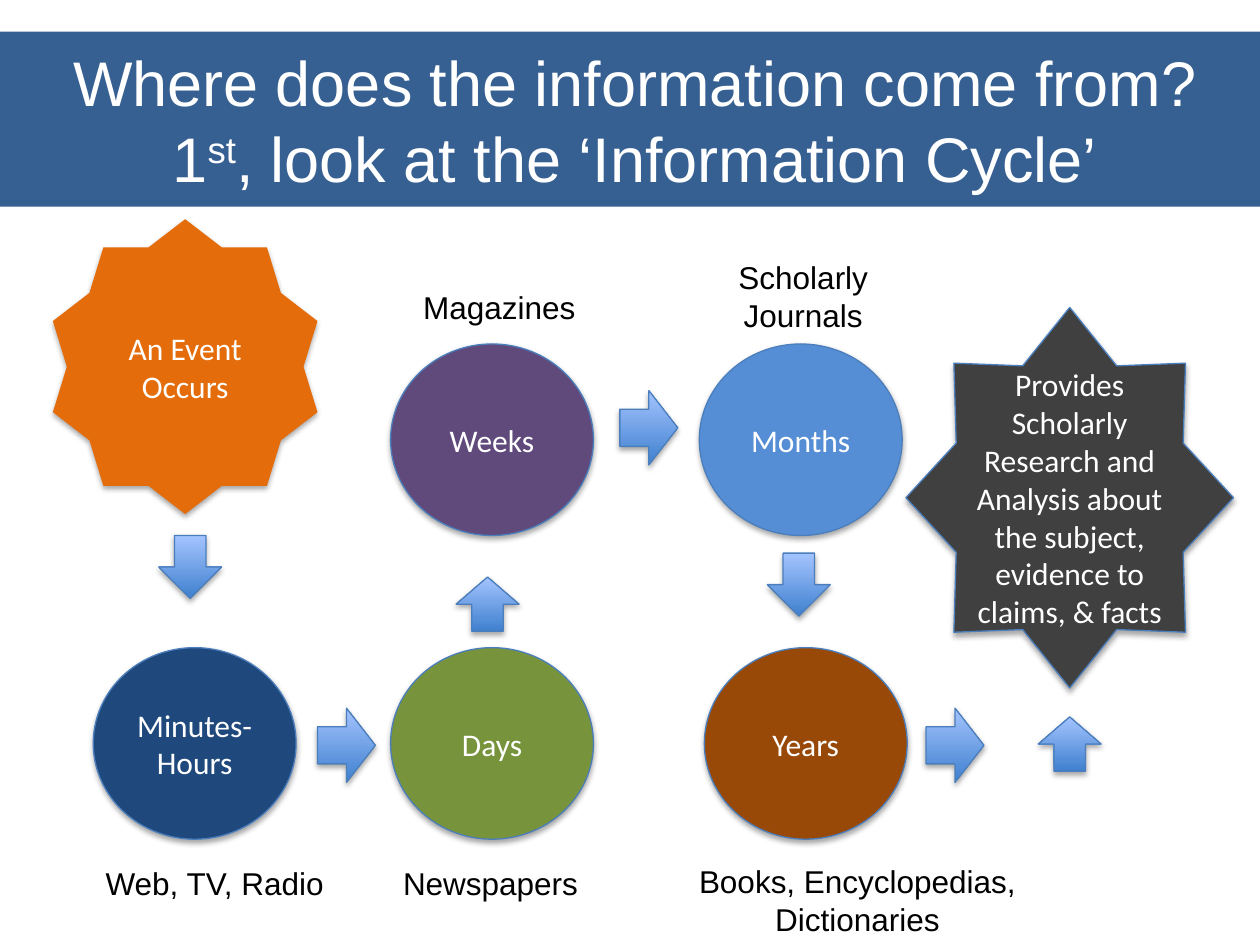
"""Build the "Information Cycle" slide."""
from dataclasses import dataclass

from lxml.etree import SubElement
from pptx import Presentation
from pptx.dml.color import RGBColor as RGB
from pptx.enum.shapes import MSO_SHAPE as Shape
from pptx.enum.text import MSO_ANCHOR as Anchor
from pptx.enum.text import MSO_AUTO_SIZE as AutoSize
from pptx.enum.text import PP_ALIGN as Align
from pptx.oxml.ns import qn
from pptx.util import Pt


@dataclass(frozen=True)
class Theme:
    """Colours, fonts and type sizes of the slide."""
    banner: str = "376092"
    event: str = "E46C0A"
    minutes: str = "1F497D"
    days: str = "77933C"
    weeks: str = "604A7B"
    months: str = "558ED5"
    years: str = "984807"
    result: str = "404040"
    outline: str = "4B7EBC"
    arrow_low: str = "3F80CE"
    arrow_high: str = "A4C4FF"
    light: str = "FFFFFF"
    dark: str = "000000"
    label_font: str = "Arial"
    shape_font: str = "Calibri"
    title_size: float = 36
    body_size: float = 18


@dataclass(frozen=True)
class Box:
    """A place and size in points."""
    left: float
    top: float
    width: float
    height: float

    def lengths(self) -> tuple:
        """Return the four lengths for python-pptx."""
        return Pt(self.left), Pt(self.top), Pt(self.width), Pt(self.height)


@dataclass(frozen=True)
class Stage:
    """A filled shape with a caption inside."""
    text: str
    kind: Shape
    box: Box
    color: str
    outlined: bool = True


@dataclass(frozen=True)
class Arrow:
    """A block arrow at a place."""
    kind: Shape
    left: float
    top: float


@dataclass(frozen=True)
class Label:
    """A text label naming the sources of a stage."""
    text: str
    box: Box
    align: Align = Align.LEFT


THEME = Theme()
UPPER, LOWER = 196.56, 370.08
LEFT, MIDDLE = 53.28, 223.2
ARROW_SIZES = {
    Shape.RIGHT_ARROW: (33.12, 42.48),
    Shape.DOWN_ARROW: (36, 36),
    Shape.UP_ARROW: (36, 31),
}


def circle(text: str, left: float, top: float, color: str) -> Stage:
    """Describe a round stage of the common size."""
    return Stage(text, Shape.OVAL, Box(left, top, 115.92, 109.44), color)


STAGES = [
    Stage("An Event Occurs", Shape.STAR_10_POINT,
          Box(30.24, 125.28, 151.2, 168.48), THEME.event, False),
    circle("Minutes-Hours", LEFT, LOWER, THEME.minutes),
    circle("Days", MIDDLE, LOWER, THEME.days),
    circle("Weeks", MIDDLE, UPPER, THEME.weeks),
    circle("Months", 399.6, UPPER, THEME.months),
    circle("Years", 402.48, LOWER, THEME.years),
    Stage("Provides Scholarly Research and Analysis about the subject, "
          "evidence to claims, & facts", Shape.STAR_8_POINT,
          Box(517.68, 175.68, 187.2, 217.44), THEME.result),
]
ARROWS = [
    Arrow(Shape.DOWN_ARROW, 90.72, 306),
    Arrow(Shape.RIGHT_ARROW, 181.44, 404.64),
    Arrow(Shape.UP_ARROW, 260.64, 329.76),
    Arrow(Shape.RIGHT_ARROW, 354.24, 223.2),
    Arrow(Shape.DOWN_ARROW, 438.48, 316.08),
    Arrow(Shape.RIGHT_ARROW, 529.2, 404.64),
    Arrow(Shape.UP_ARROW, 593.28, 409.68),
]
LABELS = [
    Label("Web, TV, Radio", Box(LEFT, 490.32, 161.28, 29)),
    Label("Newspapers", Box(MIDDLE, 490.32, 138.24, 29)),
    Label("Magazines", Box(234.72, 161.28, 138.24, 29)),
    Label("Scholarly Journals", Box(402.48, 144, 113.04, 51), Align.CENTER),
    Label("Books, Encyclopedias, Dictionaries",
          Box(389.52, 488.88, 200.88, 51), Align.CENTER),
]


def add_run(p, text: str, font: str, size: float, color: str):
    """Add a formatted run to a paragraph and return it."""
    r = p.add_run()
    r.text = text
    r.font.name, r.font.size = font, Pt(size)
    r.font.color.rgb = RGB.from_string(color)
    return r


def add_shadow(s) -> None:
    """Give a shape the soft shadow that falls straight down."""
    s.shadow.inherit = False
    effects = s._element.spPr.find(qn("a:effectLst"))
    outer = SubElement(effects, qn("a:outerShdw"), blurRad="40000",
                       dist="23000", dir="5400000", rotWithShape="0")
    color = SubElement(outer, qn("a:srgbClr"), val=THEME.dark)
    SubElement(color, qn("a:alpha"), val="35000")


def add_outline(s) -> None:
    """Draw the thin blue outline."""
    s.line.color.rgb = RGB.from_string(THEME.outline)
    s.line.width = Pt(0.75)


def add_title(slide) -> None:
    """Turn the title placeholder into the banner."""
    s = slide.shapes.title
    s.left, s.top, s.width, s.height = Box(0, 18, 725.76, 100.08).lengths()
    s.fill.solid()
    s.fill.fore_color.rgb = RGB.from_string(THEME.banner)
    tf = s.text_frame
    tf.vertical_anchor = Anchor.MIDDLE
    p = tf.paragraphs[0]
    p.alignment = Align.CENTER
    style = THEME.label_font, THEME.title_size, THEME.light
    add_run(p, "Where does the information come from?", *style)
    p.add_line_break()
    add_run(p, "1", *style)
    r = add_run(p, "st", *style)
    r._r.get_or_add_rPr().set("baseline", "30000")
    add_run(p, ", look at the ‘Information Cycle’", *style)


def add_stage(slide, stage: Stage) -> None:
    """Draw a stage with its centred caption."""
    s = slide.shapes.add_shape(stage.kind, *stage.box.lengths())
    s.fill.solid()
    s.fill.fore_color.rgb = RGB.from_string(stage.color)
    if stage.outlined:
        add_outline(s)
    else:
        s.line.fill.background()
    add_shadow(s)
    tf = s.text_frame
    tf.word_wrap, tf.vertical_anchor = True, Anchor.MIDDLE
    p = tf.paragraphs[0]
    p.alignment = Align.CENTER
    add_run(p, stage.text, THEME.shape_font, THEME.body_size, THEME.light)


def add_arrow(slide, arrow: Arrow) -> None:
    """Draw a block arrow with the vertical gradient."""
    box = Box(arrow.left, arrow.top, *ARROW_SIZES[arrow.kind])
    s = slide.shapes.add_shape(arrow.kind, *box.lengths())
    s.fill.gradient()
    s.fill.gradient_angle = 90
    for stop, color in zip(s.fill.gradient_stops, (THEME.arrow_low, THEME.arrow_high)):
        stop.color.rgb = RGB.from_string(color)
    add_outline(s)
    add_shadow(s)


def add_label(slide, label: Label) -> None:
    """Write a label."""
    tf = slide.shapes.add_textbox(*label.box.lengths()).text_frame
    tf.word_wrap, tf.auto_size = True, AutoSize.SHAPE_TO_FIT_TEXT
    p = tf.paragraphs[0]
    p.alignment = label.align
    add_run(p, label.text, THEME.label_font, THEME.body_size, THEME.dark)


def main() -> None:
    """Build and save the slide."""
    prs = Presentation()
    prs.slide_width, prs.slide_height = Pt(720), Pt(540)
    slide = prs.slides.add_slide(prs.slide_layouts[5])
    add_title(slide)
    for draw, items in ((add_stage, STAGES), (add_arrow, ARROWS), (add_label, LABELS)):
        for item in items:
            draw(slide, item)
    prs.save("out.pptx")


if __name__ == "__main__":
    main()
